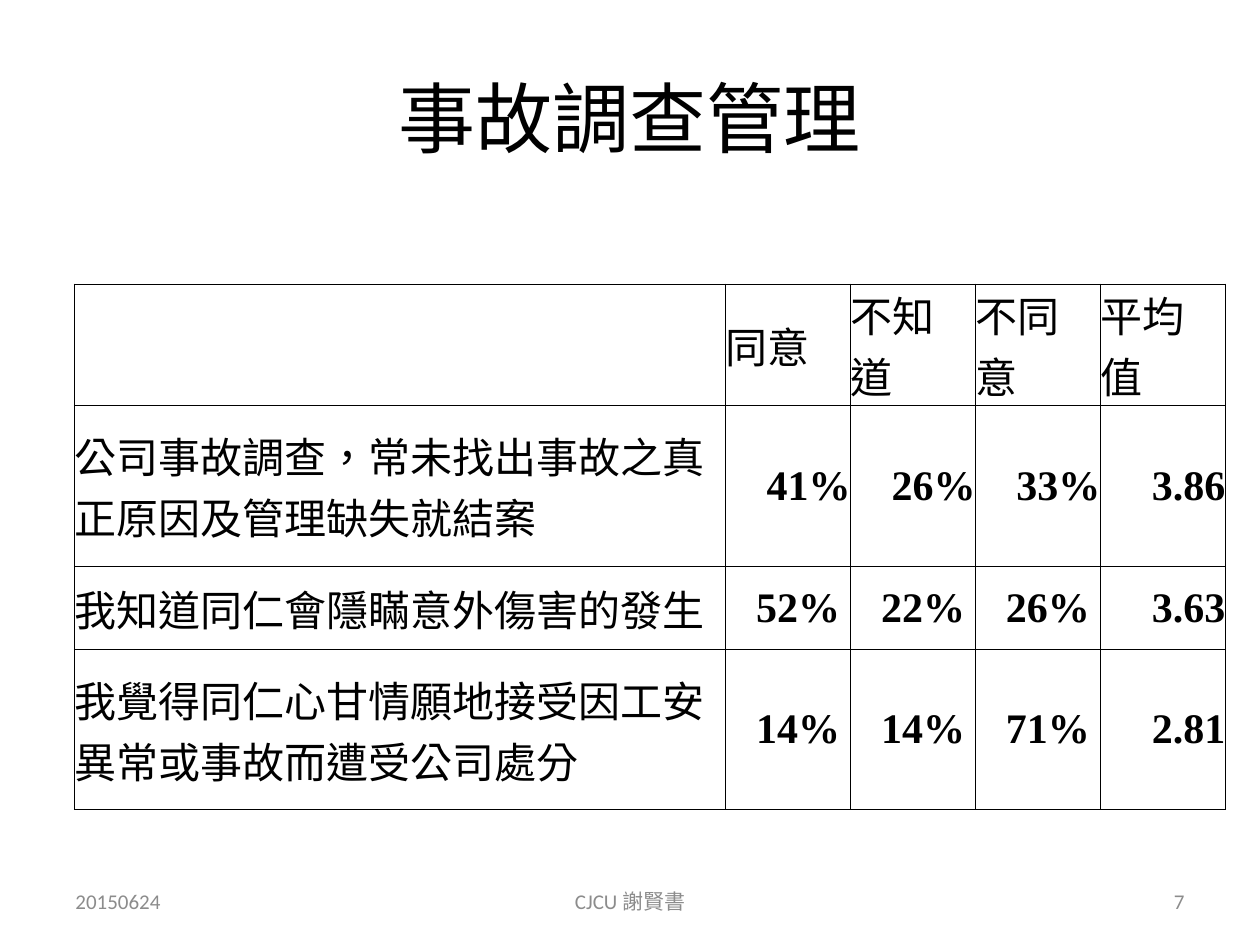
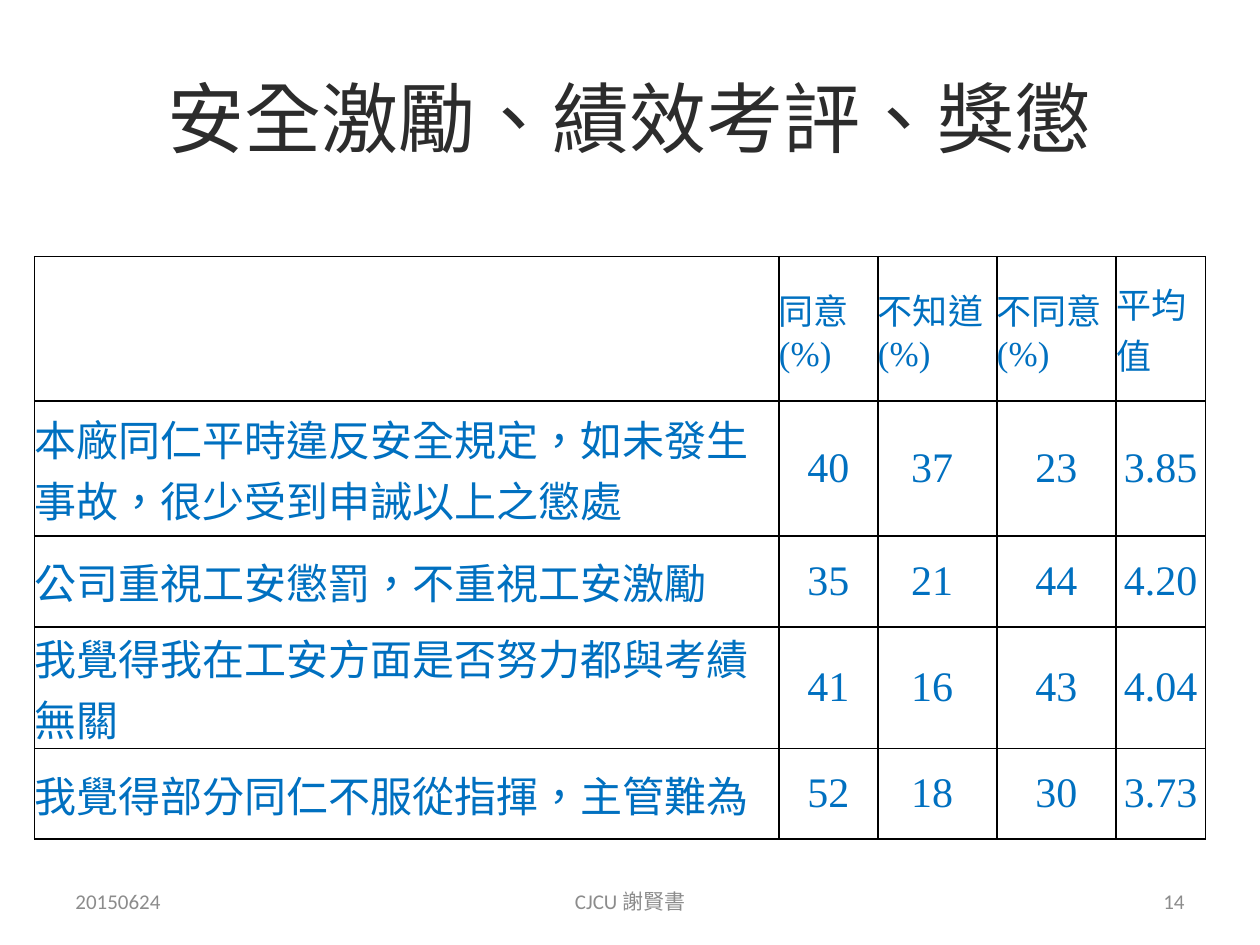
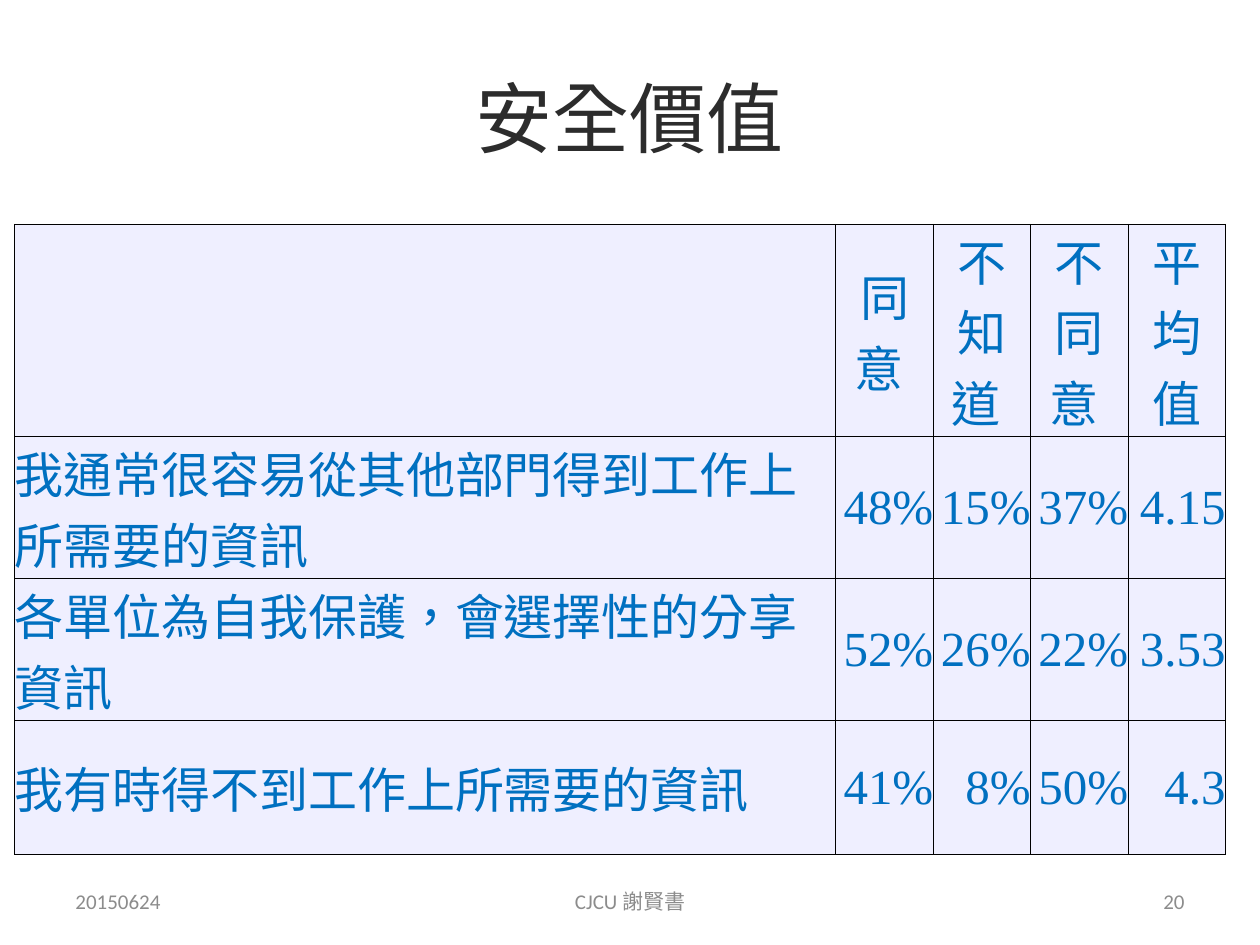
from pptx import Presentation
from pptx.dml.color import RGBColor
from pptx.enum.text import MSO_ANCHOR, PP_ALIGN
from pptx.oxml.ns import qn
from pptx.util import Pt
from lxml.etree import SubElement

CJK = "Noto Sans CJK SC"
SERIF = "Times New Roman"
BLACK, CHARCOAL, BLUE, GREY, LAVENDER = "000000", "2C2C2C", "0070C0", "8C8C8C", "EFEFFF"
LEFT, CENTER, RIGHT, JUSTIFY = PP_ALIGN.LEFT, PP_ALIGN.CENTER, PP_ALIGN.RIGHT, PP_ALIGN.JUSTIFY

DATE, AUTHOR = "20150624", "CJCU 謝賢書"

# Content: header row first, then one row per survey statement
SLIDES = [
    dict(
        title="事故調查管理", title_font=CJK, title_color=BLACK, number="7",
        left=42.5, top=162.3, cols=[372.2] + [71.4] * 4, heights=[69.5, 92, 47.3, 91.7],
        border=0.5, fill=None, color=BLACK, font=CJK, bold_values=True,
        header_size=24, size=24, header_align=LEFT, value_align=RIGHT, label_aligns={},
        rows=[
            ("", "同意", "不知道", "不同意", "平均值"),
            ("公司事故調查，常未找出事故之真正原因及管理缺失就結案", "41%", "26%", "33%", "3.86"),
            ("我知道同仁會隱瞞意外傷害的發生", "52% ", "22% ", "26% ", "3.63"),
            ("我覺得同仁心甘情願地接受因工安異常或事故而遭受公司處分", "14% ", "14% ", "71% ", "2.81"),
        ],
    ),
    dict(
        title="安全激勵、績效考評、獎懲", title_font=CJK, title_color=CHARCOAL, number="14",
        left=19.8, top=146.6, cols=[425.3, 56.6, 68, 68.1, 51], heights=[82.6, 77.1, 52, 69.5, 51.7],
        border=1, fill=None, color=BLUE, font=SERIF, bold_values=False,
        header_size=20, size=24, header_align=LEFT, value_align=CENTER, label_aligns={2: JUSTIFY},
        rows=[
            ("", "同意(%)", "不知道(%)", "不同意(%)", "平均值"),
            ("本廠同仁平時違反安全規定，如未發生事故，很少受到申誡以上之懲處", "40", "37 ", "23", "3.85"),
            ("公司重視工安懲罰，不重視工安激勵", "35", "21 ", "44", "4.20"),
            ("我覺得我在工安方面是否努力都與考績無關", "41", "16 ", "43", "4.04"),
            ("我覺得部分同仁不服從指揮，主管難為", "52", "18 ", "30", "3.73"),
        ],
    ),
    dict(
        title="安全價值", title_font="Roboto", title_color=CHARCOAL, number="20",
        left=8.4, top=128.2, cols=[469.2] + [55.7] * 4, heights=[121.4, 81.1, 81.1, 76.6],
        border=0.5, fill=LAVENDER, color=BLUE, font=SERIF, bold_values=False,
        header_size=28, size=28, header_align=CENTER, value_align=RIGHT, label_aligns={},
        rows=[
            ("", "同意 ", "不知道 ", "不同意 ", "平均值"),
            ("我通常很容易從其他部門得到工作上所需要的資訊", "48%", "15%", "37%", "4.15"),
            ("各單位為自我保護，會選擇性的分享資訊", "52%", "26%", "22%", "3.53"),
            ("我有時得不到工作上所需要的資訊", "41%", "8%", "50%", "4.3"),
        ],
    ),
]


def rgb(color):
    return RGBColor.from_string(color)


def write(tf, text, size, font, color, align=LEFT, bold=False):
    tf.word_wrap = True
    p = tf.paragraphs[0]
    p.alignment = align
    r = p.add_run()
    r.text = text
    r.font.size, r.font.name, r.font.bold = Pt(size), font, bold
    r.font.color.rgb = rgb(color)
    rPr = r.font._element
    rPr.set("lang", "zh-TW")
    SubElement(rPr, qn("a:ea")).set("typeface", CJK)


def add_text(s, box, *style):
    tf = s.shapes.add_textbox(*map(Pt, box)).text_frame
    tf.vertical_anchor = MSO_ANCHOR.MIDDLE
    write(tf, *style)


def set_borders(cell, width):
    tcPr = cell._tc.get_or_add_tcPr()
    for i, side in enumerate(("a:lnL", "a:lnR", "a:lnT", "a:lnB")):
        ln = tcPr.makeelement(qn(side), {"w": str(Pt(width))})
        SubElement(SubElement(ln, qn("a:solidFill")), qn("a:srgbClr")).set("val", BLACK)
        tcPr.insert(i, ln)  # borders come before the fill


def cell_align(d, i, j):
    if i == 0:
        return d["header_align"]
    return d["value_align"] if j else d["label_aligns"].get(i, LEFT)


def add_survey_table(s, d):
    rows, cols, heights = d["rows"], d["cols"], d["heights"]
    table = s.shapes.add_table(len(rows), len(cols), Pt(d["left"]), Pt(d["top"]),
                               Pt(sum(cols)), Pt(sum(heights))).table
    table.first_row = table.horz_banding = False
    for column, width in zip(table.columns, cols):
        column.width = Pt(width)
    for i, (row, height) in enumerate(zip(rows, heights)):
        table.rows[i].height = Pt(height)
        for j, text in enumerate(row):
            cell = table.cell(i, j)
            cell.margin_left = cell.margin_right = cell.margin_top = cell.margin_bottom = 0
            cell.vertical_anchor = MSO_ANCHOR.MIDDLE
            if d["fill"]:
                cell.fill.solid()
                cell.fill.fore_color.rgb = rgb(d["fill"])
            else:
                cell.fill.background()
            set_borders(cell, d["border"])
            if not text:
                continue
            bold = d["bold_values"] and i > 0 and j > 0
            write(cell.text_frame, text, d["size"] if i else d["header_size"],
                  SERIF if bold else d["font"], d["color"], cell_align(d, i, j), bold)


def add_footer(s, number):
    for left, width, text, align in ((36, 168, DATE, LEFT), (246, 228, AUTHOR, CENTER),
                                     (516, 168, number, RIGHT)):
        add_text(s, (left, 500.5, width, 28.8), text, 12, "Calibri", GREY, align)


def main():
    prs = Presentation()
    prs.slide_width, prs.slide_height = Pt(720), Pt(540)
    for d in SLIDES:
        s = prs.slides.add_slide(prs.slide_layouts[6])
        add_text(s, (36, 21.6, 648, 90), d["title"], 44, d["title_font"], d["title_color"], CENTER)
        add_survey_table(s, d)
        add_footer(s, d["number"])
    prs.save("out.pptx")


if __name__ == "__main__":
    main()
